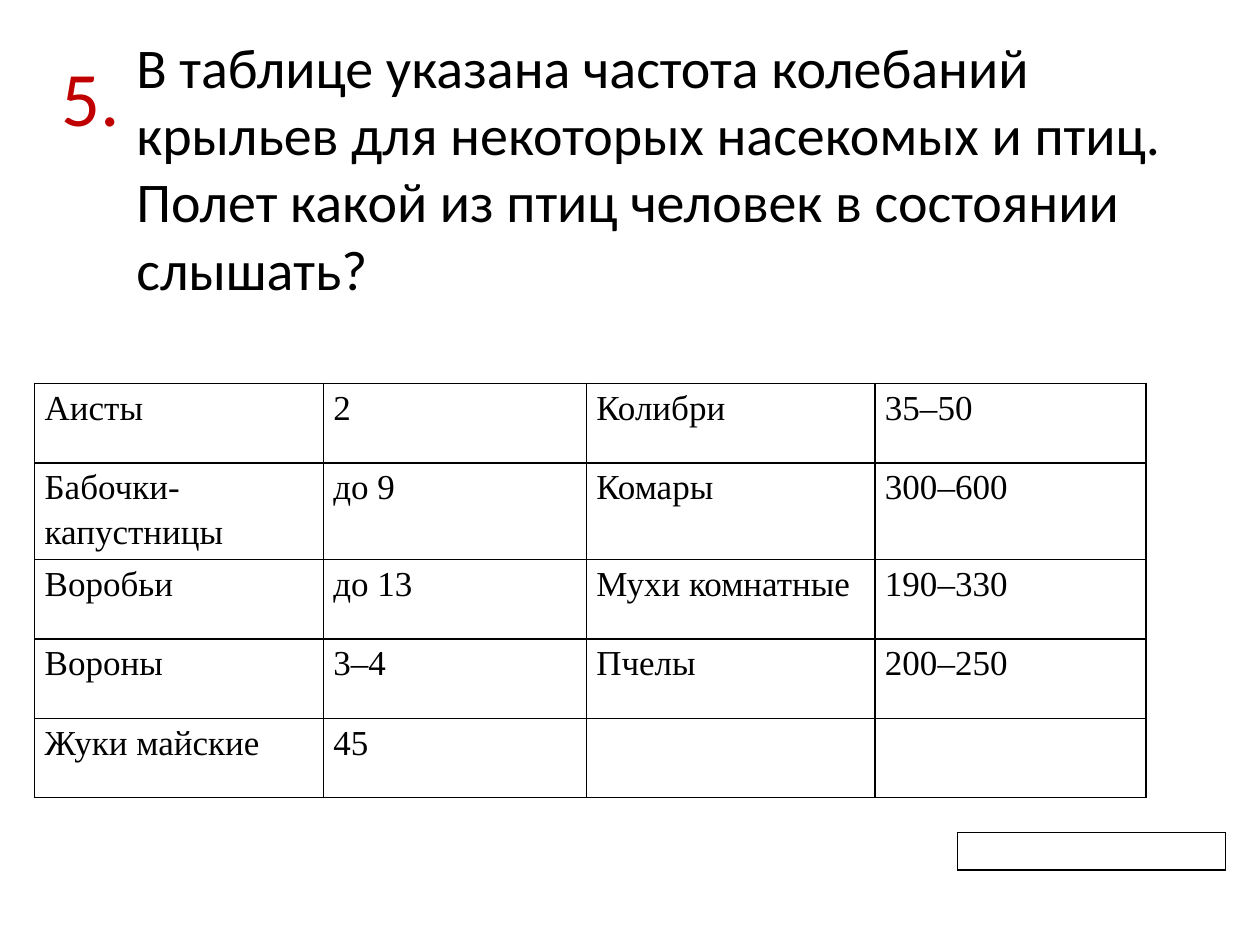
from lxml.etree import SubElement
from pptx import Presentation
from pptx.dml.color import RGBColor
from pptx.enum.text import MSO_ANCHOR, PP_ALIGN
from pptx.oxml.ns import qn
from pptx.util import Cm, Pt

BLACK = RGBColor(0, 0, 0)
WHITE = RGBColor(255, 255, 255)
RED = RGBColor(0xC0, 0, 0)

QUESTION = ("В таблице указана частота колебаний крыльев для некоторых насекомых "
            "и птиц. Полет какой из птиц человек в состоянии слышать?")
FREQUENCIES = [
    ("Аисты", "2", "Колибри", "35–50"),
    ("Бабочки-капустницы", "до 9", "Комары", "300–600"),
    ("Воробьи", "до 13", "Мухи комнатные", "190–330"),
    ("Вороны", "3–4", "Пчелы", "200–250"),
    ("Жуки майские", "45", "", ""),
]


def add_text(text, box, size, color, anchor, align):
    tf = slide.shapes.add_textbox(*map(Cm, box)).text_frame
    tf.word_wrap = True
    tf.vertical_anchor = anchor
    tf.text = text
    p = tf.paragraphs[0]
    p.alignment = align
    font = p.runs[0].font
    font.name, font.size, font.color.rgb = "Calibri", Pt(size), color


def add_grid(rows, left, top, widths, row_height):
    """Add a plain white table with thin black borders."""
    table = slide.shapes.add_table(
        len(rows), len(widths), Cm(left), Cm(top),
        Cm(sum(widths)), Cm(row_height * len(rows))).table
    table.first_row = table.horz_banding = False
    for column, width in zip(table.columns, widths):
        column.width = Cm(width)
    for i, row in enumerate(rows):
        table.rows[i].height = Cm(row_height)
        for j, text in enumerate(row):
            cell = table.cell(i, j)
            cell.margin_left = Cm(0.2)
            cell.margin_right = cell.margin_top = cell.margin_bottom = 0
            p = cell.text_frame.paragraphs[0]
            p.line_spacing = 1.15 if text else 1
            p.text = text
            for r in p.runs:
                r.font.name, r.font.size = "Times New Roman", Pt(20)
                r.font.color.rgb = BLACK
            tcPr = cell._tc.get_or_add_tcPr()
            for side in ("a:lnL", "a:lnR", "a:lnT", "a:lnB"):
                ln = SubElement(tcPr, qn(side), w=str(Pt(1)))
                fill = SubElement(ln, qn("a:solidFill"))
                SubElement(fill, qn("a:srgbClr"), val=str(BLACK))
            cell.fill.solid()
            cell.fill.fore_color.rgb = WHITE


prs = Presentation()
prs.slide_width, prs.slide_height = Cm(25.4), Cm(19.05)
slide = prs.slides.add_slide(prs.slide_layouts[6])

add_text("5.", (0.5, 0.33, 2.65, 3.18), 44, RED, MSO_ANCHOR.MIDDLE, PP_ALIGN.CENTER)
add_grid(FREQUENCIES, 0.7, 7.73, (5.82, 5.3, 5.82, 5.46), 1.6)
add_text(QUESTION, (2.5, 0.53, 21.2, 6.25), 32, BLACK, MSO_ANCHOR.TOP, PP_ALIGN.LEFT)
add_grid([("",)], 19.3, 16.78, (5.4,), 0.76)

prs.save("out.pptx")
